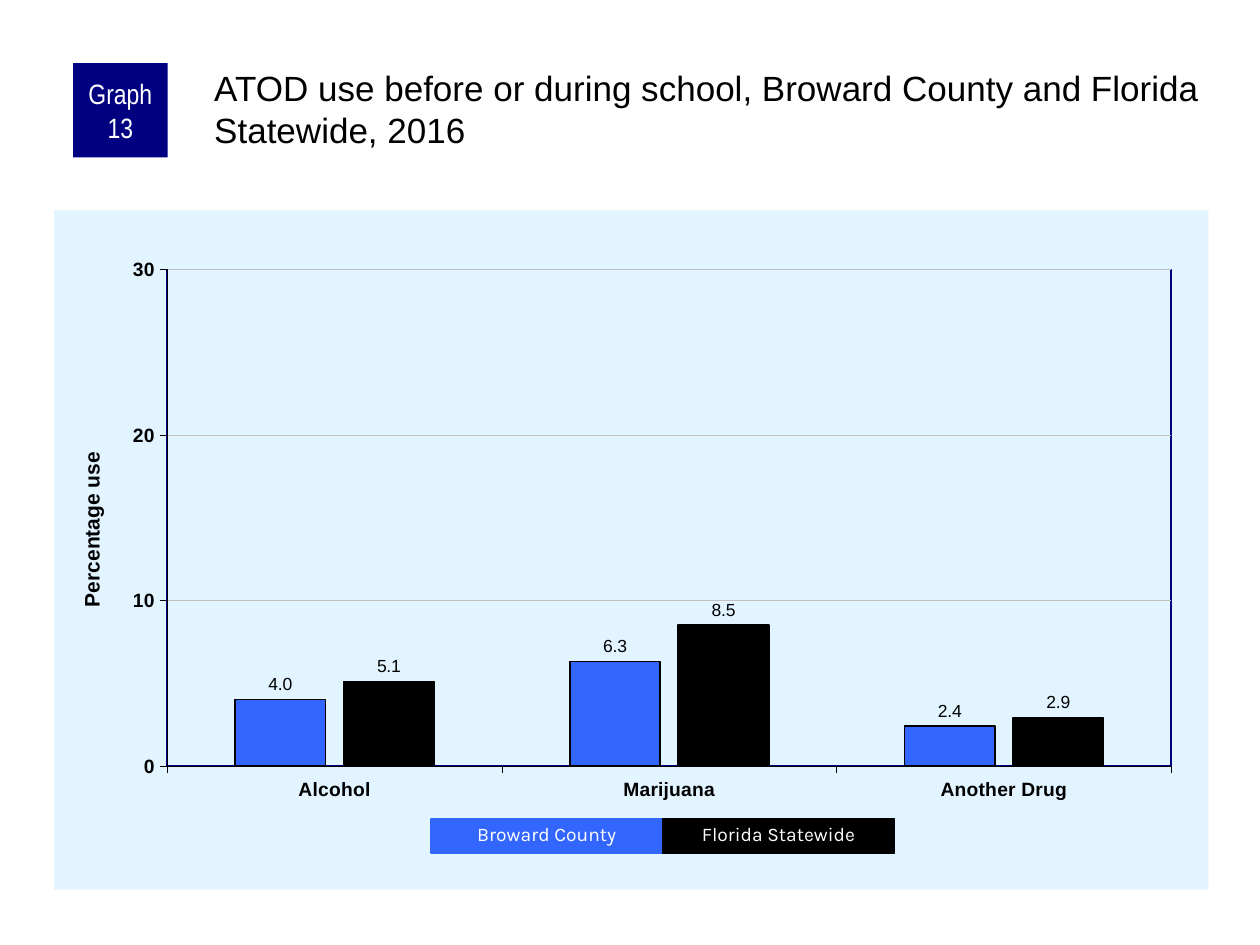
from lxml import etree
from pptx import Presentation
from pptx.chart.data import CategoryChartData
from pptx.dml.color import RGBColor
from pptx.enum.chart import XL_CHART_TYPE, XL_LABEL_POSITION, XL_TICK_MARK
from pptx.enum.shapes import MSO_SHAPE
from pptx.enum.text import MSO_ANCHOR, PP_ALIGN
from pptx.oxml import parse_xml
from pptx.util import Inches, Pt

COLUMNS = XL_CHART_TYPE.COLUMN_CLUSTERED
OUTSIDE_END = XL_LABEL_POSITION.OUTSIDE_END
TICK_OUT, TICK_NONE = XL_TICK_MARK.OUTSIDE, XL_TICK_MARK.NONE
RECT = MSO_SHAPE.RECTANGLE
TOP, MIDDLE = MSO_ANCHOR.TOP, MSO_ANCHOR.MIDDLE
LEFT, CENTER = PP_ALIGN.LEFT, PP_ALIGN.CENTER

NAVY, BLUE, BLACK, WHITE = "000080", "3366FF", "000000", "FFFFFF"
PALE_BLUE, GRID_GRAY = "E1F4FF", "C0C0C0"
CHART_NS = "http://schemas.openxmlformats.org/drawingml/2006/chart"
DRAWING_NS = "http://schemas.openxmlformats.org/drawingml/2006/main"


def rgb(value):
    return RGBColor.from_string(value)


def set_font(font, size, color=BLACK, bold=False, name="Arial"):
    font.name, font.size, font.bold = name, Pt(size), bold
    font.color.rgb = rgb(color)


def set_line(line, color, width):
    line.color.rgb = rgb(color)
    line.width = Pt(width)


def write(frame, text, size, color=BLACK, font="Arial", align=LEFT, anchor=TOP,
          insets=(0.1, 0.05, 0.1, 0.05), spacing=None):
    frame.word_wrap = True
    frame.vertical_anchor = anchor
    (frame.margin_left, frame.margin_top,
     frame.margin_right, frame.margin_bottom) = map(Inches, insets)
    paragraph = frame.paragraphs[0]
    paragraph.alignment = align
    paragraph.line_spacing = spacing
    run = paragraph.add_run()
    run.text = text
    set_font(run.font, size, color, name=font)


def area_format(fill, line):
    """Return the c:spPr of a chart part; None means no fill or no line."""
    def paint(color):
        return f'<a:solidFill><a:srgbClr val="{color}"/></a:solidFill>' if color else "<a:noFill/>"
    return parse_xml(
        f'<c:spPr xmlns:c="{CHART_NS}" xmlns:a="{DRAWING_NS}">{paint(fill)}'
        f'<a:ln w="{Pt(1)}">{paint(line)}</a:ln></c:spPr>')


def place_plot(plot_area, x, y, w, h):
    """Fix the inner plot area as fractions of the chart."""
    for old in plot_area.findall(f"{{{CHART_NS}}}layout"):
        plot_area.remove(old)
    layout = etree.Element(f"{{{CHART_NS}}}layout")
    manual = etree.SubElement(layout, f"{{{CHART_NS}}}manualLayout")
    settings = {"layoutTarget": "inner", "xMode": "edge", "yMode": "edge",
                "x": x, "y": y, "w": w, "h": h}
    for tag, value in settings.items():
        etree.SubElement(manual, f"{{{CHART_NS}}}{tag}").set("val", str(value))
    plot_area.insert(0, layout)


class GraphSlide:
    def __init__(self, presentation):
        self.slide = presentation.slides.add_slide(presentation.slide_layouts[6])

    def heading(self, box, text, **style):
        title = self.slide.shapes.add_textbox(*map(Inches, box))
        write(title.text_frame, text, **style)

    def block(self, box, text, fill, outlined=False, **style):
        block = self.slide.shapes.add_shape(RECT, *map(Inches, box))
        block.shadow.inherit = False
        block.fill.solid()
        block.fill.fore_color.rgb = rgb(fill)
        if outlined:
            set_line(block.line, fill, 0.75)
        else:
            block.line.fill.background()
        write(block.text_frame, text, color=WHITE, align=CENTER, **style)

    def column_chart(self, box, categories, series, axis_title):
        data = CategoryChartData(number_format="0.0")
        data.categories = categories
        for name, values, _ in series:
            data.add_series(name, values)
        chart = self.slide.shapes.add_chart(COLUMNS, *map(Inches, box), data).chart
        chart.has_title = chart.has_legend = False
        set_font(chart.font, 11.5)

        # Columns and their values
        plot = chart.plots[0]
        plot.gap_width, plot.overlap, plot.vary_by_categories = 150, -20, False
        for columns, (_, _, color) in zip(plot.series, series):
            columns.format.fill.solid()
            columns.format.fill.fore_color.rgb = rgb(color)
            set_line(columns.format.line, BLACK, 1)
            labels = columns.data_labels
            labels.show_value = True
            labels.number_format, labels.number_format_is_linked = "0.0", False
            labels.position = OUTSIDE_END
            set_font(labels.font, 10)

        # Axes
        for axis in (chart.category_axis, chart.value_axis):
            axis.major_tick_mark, axis.minor_tick_mark = TICK_OUT, TICK_NONE
            set_font(axis.tick_labels.font, 11, bold=True)
            set_line(axis.format.line, BLACK, 0.25)
        percent = chart.value_axis
        percent.minimum_scale, percent.maximum_scale, percent.major_unit = 0, 30, 10
        percent.tick_labels.number_format = "0"
        percent.tick_labels.number_format_is_linked = False
        set_line(percent.major_gridlines.format.line, GRID_GRAY, 0.25)
        title = percent.axis_title.text_frame
        title.text = axis_title
        set_font(title.paragraphs[0].runs[0].font, 12, bold=True)

        # Background and plot frame
        body = chart.element.find(f"{{{CHART_NS}}}chart")
        body.addnext(area_format(PALE_BLUE, None))
        plot_area = body.find(f"{{{CHART_NS}}}plotArea")
        place_plot(plot_area, 0.098, 0.087, 0.87, 0.731)
        plot_area.append(area_format(None, NAVY))


def main():
    presentation = Presentation()
    presentation.slide_width, presentation.slide_height = Inches(10), Inches(7.5)
    graph = GraphSlide(presentation)

    # Chart
    graph.column_chart(
        (0.43, 1.67, 9.16, 5.39), ["Alcohol", "Marijuana", "Another Drug"],
        [("Series 1", (4.0, 6.3, 2.4), BLUE), ("Series 2", (5.1, 8.5, 2.9), BLACK)],
        "Percentage use")

    # Graph number and heading
    graph.block((0.58, 0.5, 0.75, 0.75), "Graph 13", NAVY, size=16,
                font="Arial Narrow", anchor=MIDDLE, insets=(0.05, 0, 0.05, 0))
    graph.heading((1.67, 0.5, 7.92, 0.83),
                  "ATOD use before or during school, Broward County and Florida Statewide, 2016",
                  size=20, insets=(0.03, 0.03, 0, 0))

    # Legend
    key_left, key_width = 3.42, 1.84
    for i, (region, color) in enumerate([("Broward County", BLUE), ("Florida Statewide", BLACK)]):
        graph.block((key_left + i * key_width, 6.5, key_width, 0.27), region, color,
                    outlined=True, size=11, font="Karla", spacing=0.9)

    presentation.save("out.pptx")


if __name__ == "__main__":
    main()
